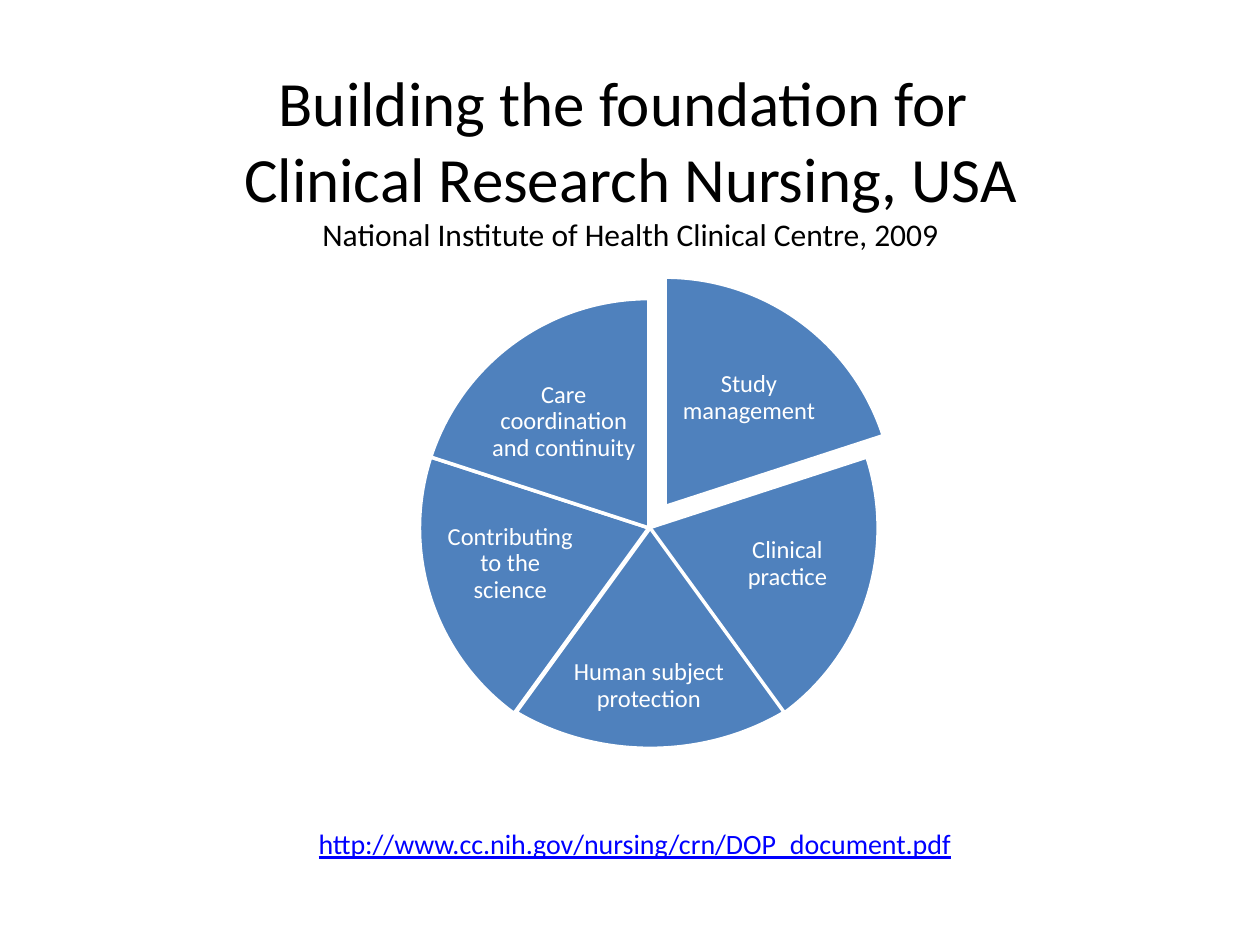
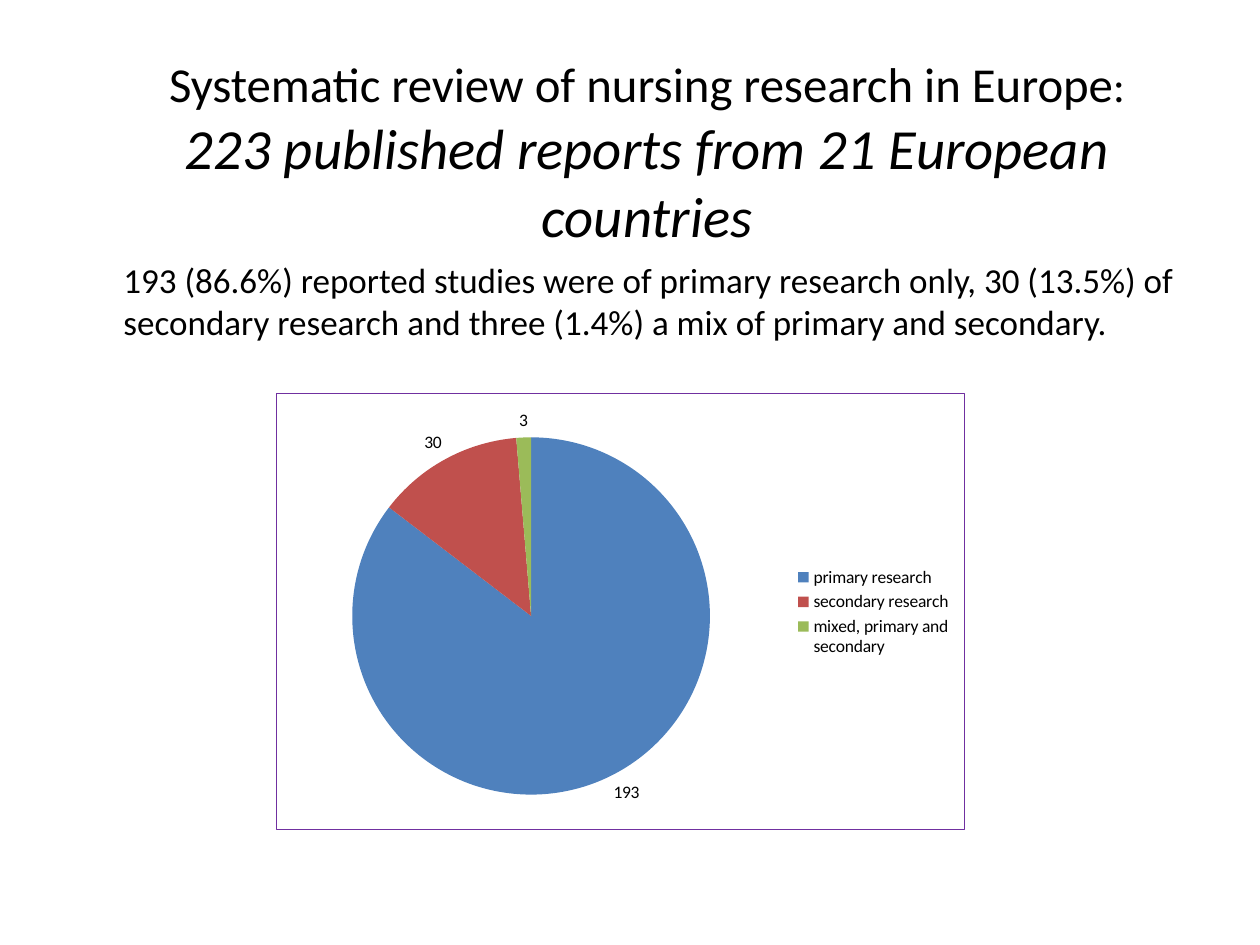
from lxml import etree
from pptx import Presentation
from pptx.chart.data import CategoryChartData
from pptx.dml.color import RGBColor
from pptx.enum.chart import XL_CHART_TYPE, XL_LABEL_POSITION, XL_LEGEND_POSITION
from pptx.enum.shapes import MSO_SHAPE
from pptx.enum.text import MSO_ANCHOR, MSO_AUTO_SIZE, PP_ALIGN
from pptx.oxml import parse_xml
from pptx.oxml.ns import nsdecls, qn
from pptx.util import Inches, Pt

COLORS = {
    "text": "000000", "white": "FFFFFF", "link": "0000FF", "border": "7030A0",
    "blue": "4F81BD", "red": "C0504D", "green": "9BBB59",
}
FONT = "Calibri"


def color(name):
    return RGBColor.from_string(COLORS[name])


def write(box, place, lines, align, anchor, ink="text", margin=None):
    """Place a box and fill it; each line is a list of (text, size, italic)."""
    box.left, box.top, box.width, box.height = [Inches(length) for length in place]
    frame = box.text_frame
    frame.word_wrap = True
    frame.auto_size = MSO_AUTO_SIZE.NONE
    frame.vertical_anchor = anchor
    if margin is not None:
        frame.margin_left = frame.margin_right = Inches(margin)
        frame.margin_top = frame.margin_bottom = Inches(margin)
    para = frame.paragraphs[0]
    para.alignment = align
    para.space_before = Pt(0)
    para.font.name = FONT
    para.font.color.rgb = color(ink)
    for number, line in enumerate(lines):
        if number:
            para.add_line_break()
        for text, size, italic in line:
            span = para.add_run()
            span.text = text
            span.font.name = FONT
            span.font.size = Pt(size)
            span.font.color.rgb = color(ink)
            if italic:
                span.font.italic = True
    return para


deck = Presentation()
deck.slide_width, deck.slide_height = Inches(10), Inches(7.5)

# Slide 1: title
page = deck.slides.add_slide(deck.slide_layouts[5])
write(page.shapes.title, (0.67, 0.39, 8.67, 1.73), [
    [("Building the foundation for ", 36, False)],
    [("Clinical Research Nursing, USA", 36, False)],
    [("National Institute of Health Clinical Centre, 2009", 18, False)],
], PP_ALIGN.CENTER, MSO_ANCHOR.MIDDLE)

# Slide 1: wheel of five equal slices, clockwise from the top
circle = (3.33, 2.37, 3.64, 3.64)
slices = [
    ("Study management", (3.46, 2.2, 3.64, 3.64), (5.33, 2.74, 1.23, 0.84)),
    ("Clinical practice", circle, (5.71, 4.02, 1.08, 0.91)),
    ("Human subject protection", (3.22, 2.44, 3.88, 3.5), (4.46, 5.07, 1.38, 0.75)),
    ("Contributing to the science", circle, (3.51, 4.02, 1.08, 0.91)),
    ("Care coordination and continuity", circle, (3.86, 2.93, 1.23, 0.84)),
]
sweep = 360 / len(slices)
for number, (label, wheel_place, label_place) in enumerate(slices):
    wedge = page.shapes.add_shape(
        MSO_SHAPE.PIE, *[Inches(length) for length in wheel_place])
    start = 270 + number * sweep
    for side, angle in enumerate((start, start + sweep)):
        wedge.adjustments[side] = angle % 360 * 0.6  # 60000ths of a degree / 100000
    wedge.shadow.inherit = False
    wedge.fill.solid()
    wedge.fill.fore_color.rgb = color("blue")
    wedge.line.color.rgb = color("white")
    wedge.line.width = Pt(2)

    box = page.shapes.add_textbox(0, 0, 0, 0)
    para = write(box, label_place, [[(label, 14, False)]],
                 PP_ALIGN.CENTER, MSO_ANCHOR.MIDDLE, "white", 0.02)
    para.line_spacing = 0.9

# Slide 1: source address
box = page.shapes.add_textbox(0, 0, 0, 0)
para = write(box, (2.43, 6.51, 6.3, 0.67),
             [[("http://www.cc.nih.gov/nursing/crn/DOP_document.pdf", 16, False)]],
             PP_ALIGN.LEFT, MSO_ANCHOR.TOP, "link")
para.runs[0].font.underline = True

# Slide 2: title and finding
page = deck.slides.add_slide(deck.slide_layouts[1])
write(page.shapes.title, (0.5, 0.41, 9.27, 1.58), [
    [("Systematic review of nursing research in Europe", 27.9, False),
     (":", 25.2, False)],
    [("223 published reports from 21 European countries", 32.4, True)],
], PP_ALIGN.CENTER, MSO_ANCHOR.MIDDLE)
para = write(page.placeholders[1], (0.88, 2, 8.62, 0.9), [[(
    "193 (86.6%) reported studies were of primary research only, 30 (13.5%) of "
    "secondary research and three (1.4%) a mix of primary and secondary.",
    20, False)]], PP_ALIGN.LEFT, MSO_ANCHOR.TOP)
properties = para._p.get_or_add_pPr()
properties.set("marL", "0")
properties.set("indent", "0")
bullet = etree.Element(qn("a:buNone"))
properties.find(qn("a:spcBef")).addnext(bullet)

# Slide 2: pie chart of report types
data = CategoryChartData()
data.categories = ["primary research", "secondary research",
                   "mixed, primary and secondary"]
data.add_series("Series 1", (193, 30, 3))
chart = page.shapes.add_chart(
    XL_CHART_TYPE.PIE, Inches(2.19), Inches(3.12), Inches(5.47), Inches(3.47), data).chart
chart.has_title = False
chart.font.name = FONT
chart.font.size = Pt(10)
chart.font.color.rgb = color("text")
chart.has_legend = True
chart.legend.position = XL_LEGEND_POSITION.RIGHT
chart.legend.include_in_layout = False

plot = chart.plots[0]
plot.vary_by_categories = True
plot.has_data_labels = True
plot.data_labels.show_value = True
plot.data_labels.show_percentage = False
plot.data_labels.position = XL_LABEL_POSITION.OUTSIDE_END
for number, name in enumerate(("blue", "red", "green")):
    fill = plot.series[0].points[number].format.fill
    fill.solid()
    fill.fore_color.rgb = color(name)

# Chart frame and plot area
chart.element.find(qn("c:chart")).addnext(parse_xml(
    f'<c:spPr {nsdecls("c", "a")}><a:noFill/><a:ln w="{Pt(0.75)}"><a:solidFill>'
    f'<a:srgbClr val="{COLORS["border"]}"/></a:solidFill></a:ln></c:spPr>'))
plot_area = chart.element.find(".//" + qn("c:plotArea"))
for old_layout in plot_area.findall(qn("c:layout")):
    plot_area.remove(old_layout)
plot_area.insert(0, parse_xml(
    f'<c:layout {nsdecls("c")}><c:manualLayout><c:layoutTarget val="inner"/>'
    '<c:xMode val="edge"/><c:yMode val="edge"/><c:x val="0.11"/><c:y val="0.1"/>'
    '<c:w val="0.52"/><c:h val="0.82"/></c:manualLayout></c:layout>'))

deck.save("out.pptx")
